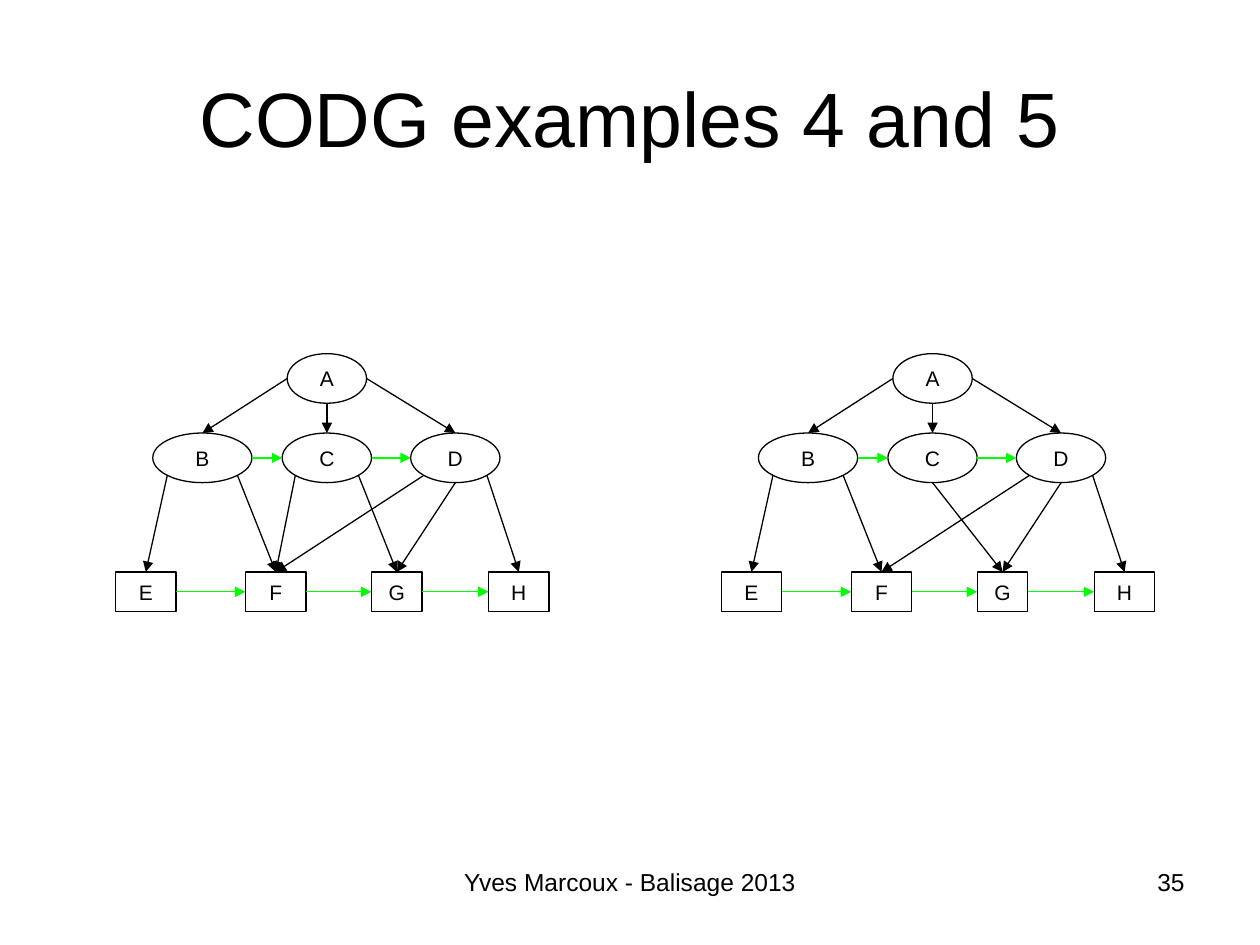
import math
from dataclasses import dataclass

import pptx
import pptx.dml.color
import pptx.enum.shapes
import pptx.enum.text
import pptx.oxml
import pptx.oxml.ns
import pptx.util
from pptx.util import Cm

RGB = pptx.dml.color.RGBColor
SHAPE = pptx.enum.shapes.MSO_SHAPE
ALIGN = pptx.enum.text.PP_ALIGN
ANCHOR = pptx.enum.text.MSO_ANCHOR


@dataclass(frozen=True)
class Theme:
    font: str = "Arial"
    ink: RGB = RGB(0, 0, 0)
    order: RGB = RGB(0, 255, 0)
    title: float = 44
    footer: float = 14
    node: float = 12
    line: float = 0.75


THEME = Theme()

# Content
TITLE = "CODG examples 4 and 5"
FOOTER = "Yves Marcoux - Balisage 2013"
PAGE = "35"

# Rows of nodes: shape, top, height, {label: (centre x, width)} in cm
ROWS = [
    (SHAPE.OVAL, 7.13, 1.0, {"A": (4.26, 1.6)}),
    (SHAPE.OVAL, 8.73, 1.0, {"B": (1.75, 2.0), "C": (4.26, 1.8), "D": (6.85, 1.8)}),
    (SHAPE.RECTANGLE, 11.53, 0.8,
     {"E": (0.61, 1.22), "F": (3.23, 1.22), "G": (5.67, 1.02), "H": (8.13, 1.22)}),
]

# Parent-child edges: parent, side of the parent, child
SHARED_EDGES = [
    ("A", "left", "B"), ("A", "bottom", "C"), ("A", "right", "D"),
    ("B", "bottom left", "E"), ("B", "bottom right", "F"),
    ("D", "bottom left", "F"), ("D", "bottom", "G"), ("D", "bottom right", "H"),
]
EXAMPLES = [  # left edge in cm, edges
    (2.33, SHARED_EDGES + [("C", "bottom left", "F"), ("C", "bottom right", "G")]),
    (14.54, SHARED_EDGES + [("C", "bottom", "G")]),
]
ORDER_EDGES = ["BC", "CD", "EF", "FG", "GH"]

# Points on an outline, in half widths and half heights from the centre
DIAGONAL = math.sqrt(0.5)
SIDES = {
    "top": (0, -1), "bottom": (0, 1), "left": (-1, 0), "right": (1, 0),
    "bottom left": (-DIAGONAL, DIAGONAL), "bottom right": (DIAGONAL, DIAGONAL),
}


def set_text(frame, text, size, align, anchor, wrap=True):
    frame.text = text
    frame.word_wrap = wrap
    frame.vertical_anchor = anchor
    paragraph = frame.paragraphs[0]
    paragraph.alignment = align
    font = paragraph.runs[0].font
    font.name, font.size = THEME.font, pptx.util.Pt(size)
    font.color.rgb = THEME.ink


def add_node(slide, kind, label, x, y, width, height):
    node = slide.shapes.add_shape(
        kind, Cm(x - width / 2), Cm(y - height / 2), Cm(width), Cm(height))
    node.shadow.inherit = False
    node.fill.background()
    node.line.color.rgb = THEME.ink
    node.line.width = pptx.util.Pt(THEME.line)
    set_text(node.text_frame, label, THEME.node, ALIGN.CENTER, ANCHOR.MIDDLE, wrap=False)


def add_arrow(slide, start, end, color):
    arrow = slide.shapes.add_connector(
        pptx.enum.shapes.MSO_CONNECTOR.STRAIGHT, *map(Cm, start + end))
    arrow.line.color.rgb = color
    arrow.line.width = pptx.util.Pt(THEME.line)
    head = pptx.oxml.parse_xml(f'<a:tailEnd {pptx.oxml.ns.nsdecls("a")} type="triangle"/>')
    arrow.line._get_or_add_ln().append(head)
    no_shadow = pptx.oxml.parse_xml(f'<a:effectLst {pptx.oxml.ns.nsdecls("a")}/>')
    arrow._element.spPr.append(no_shadow)


def add_graph(slide, left, edges):
    boxes = {}
    for kind, top, height, nodes in ROWS:
        for label, (x, width) in nodes.items():
            boxes[label] = (left + x, top + height / 2, width, height)
            add_node(slide, kind, label, *boxes[label])

    def point(label, side):
        x, y, width, height = boxes[label]
        dx, dy = SIDES[side]
        return x + dx * width / 2, y + dy * height / 2

    for parent, side, child in edges:
        add_arrow(slide, point(parent, side), point(child, "top"), THEME.ink)
    for before, after in ORDER_EDGES:
        add_arrow(slide, point(before, "right"), point(after, "left"), THEME.order)


def main():
    deck = pptx.Presentation()
    deck.slide_width, deck.slide_height = Cm(25.4), Cm(19.05)
    slide = deck.slides.add_slide(deck.slide_layouts[5])

    # Title
    title = slide.shapes.title
    title.left, title.top, title.width, title.height = map(Cm, (1.27, 0.76, 22.86, 3.18))
    set_text(title.text_frame, TITLE, THEME.title, ALIGN.CENTER, ANCHOR.MIDDLE)

    # Graphs
    for left, edges in EXAMPLES:
        add_graph(slide, left, edges)

    # Footer and page number
    for text, left, width, align in [(FOOTER, 5.93, 13.54, ALIGN.CENTER),
                                     (PAGE, 18.2, 5.93, ALIGN.RIGHT)]:
        box = slide.shapes.add_textbox(Cm(left), Cm(17.35), Cm(width), Cm(1.32))
        set_text(box.text_frame, text, THEME.footer, align, ANCHOR.TOP)

    deck.save("out.pptx")


if __name__ == "__main__":
    main()
